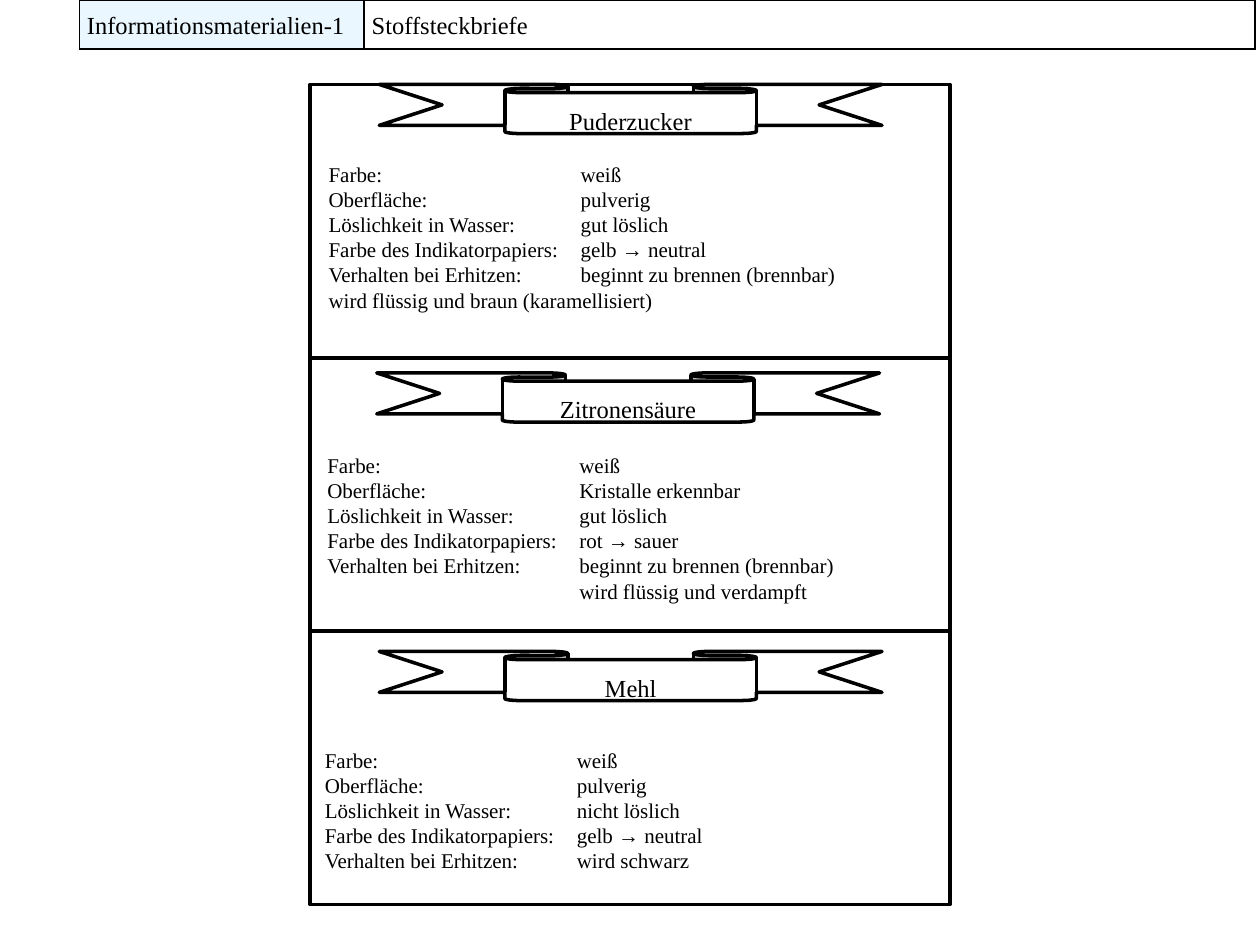
from dataclasses import dataclass

from lxml.etree import SubElement
from pptx import Presentation
from pptx.dml.color import RGBColor
from pptx.enum.shapes import MSO_SHAPE as Preset
from pptx.enum.text import MSO_ANCHOR as Anchor, PP_ALIGN as Align
from pptx.oxml.ns import qn
from pptx.util import Inches, Pt


@dataclass(frozen=True)
class Theme:
    font: str = "Times New Roman"
    ink: RGBColor = RGBColor(0, 0, 0)
    paper: RGBColor = RGBColor(255, 255, 255)
    tint: RGBColor = RGBColor(0xEB, 0xF7, 0xFF)
    heading: int = 14
    body: int = 12
    outline: int = 2
    border: int = 1


@dataclass(frozen=True)
class Profile:
    """One substance; offsets are (left, top) in inches from its card's corner."""
    name: str
    ribbon_offset: tuple
    facts_offset: tuple
    values: tuple


THEME = Theme()
CARD_LEFT, CARD_TOP, CARD_WIDTH, CARD_HEIGHT = 2.46, 0.67, 5.08, 2.17
RIBBON_SIZE = (3.99, 0.39)
FACTS_WIDTH, LINE_HEIGHT, VALUE_TAB = 5, 0.2, 2
HEADER_COLUMNS = (2.26, 7.07)
HEADER_LEFT, HEADER_HEIGHT = 0.63, 0.39

LABELS = ("Farbe:", "Oberfläche:", "Löslichkeit in Wasser:",
          "Farbe des Indikatorpapiers:", "Verhalten bei Erhitzen:")
PROFILES = (
    Profile("Puderzucker", (0.55, 0), (0.05, 0.56),
            ("weiß", "pulverig", "gut löslich", "gelb → neutral",
             "beginnt zu brennen (brennbar)\n"
             "wird flüssig und braun (karamellisiert)")),
    Profile("Zitronensäure", (0.53, 0.12), (0.04, 0.7),
            ("weiß", "Kristalle erkennbar", "gut löslich", "rot → sauer",
             "beginnt zu brennen (brennbar)\n\twird flüssig und verdampft")),
    Profile("Mehl", (0.55, 0.16), (0.02, 0.87),
            ("weiß", "pulverig", "nicht löslich", "gelb → neutral",
             "wird schwarz")),
)


def box(left, top, width, height):
    return [Inches(length) for length in (left, top, width, height)]


def add_run(paragraph, text, size):
    run = paragraph.add_run()
    run.text = text
    run.font.name = THEME.font
    run.font.size = Pt(size)
    run.font.color.rgb = THEME.ink


def add_outlined_shape(slide, preset, bounds, fill=None):
    shape = slide.shapes.add_shape(preset, *box(*bounds))
    shape.shadow.inherit = False
    if fill is None:
        shape.fill.background()
    else:
        shape.fill.solid()
        shape.fill.fore_color.rgb = fill
    shape.line.color.rgb = THEME.ink
    shape.line.width = Pt(THEME.outline)
    return shape


def add_ribbon(slide, left, top, name):
    ribbon = add_outlined_shape(slide, Preset.DOWN_RIBBON,
                                (left, top, *RIBBON_SIZE), THEME.paper)
    ribbon.text_frame.vertical_anchor = Anchor.MIDDLE
    paragraph = ribbon.text_frame.paragraphs[0]
    paragraph.alignment = Align.CENTER
    paragraph.line_spacing = 1.5
    add_run(paragraph, name, THEME.heading)


def set_value_tab(paragraph):
    tabs = SubElement(paragraph._p.get_or_add_pPr(), qn("a:tabLst"))
    SubElement(tabs, qn("a:tab"), pos=str(Inches(VALUE_TAB)), algn="l")


def add_facts(slide, left, top, values):
    """Lists label and value on a shared tab stop; a newline is a line break."""
    lines = [f"{label}\t{value}" for label, value in zip(LABELS, values)]
    line_count = "\n".join(lines).count("\n") + 1
    height = line_count * LINE_HEIGHT + 0.1
    frame = slide.shapes.add_textbox(
        *box(left, top, FACTS_WIDTH, height)).text_frame
    frame.word_wrap = True
    for index, line in enumerate(lines):
        paragraph = frame.add_paragraph() if index else frame.paragraphs[0]
        set_value_tab(paragraph)
        for part_index, part in enumerate(line.split("\n")):
            if part_index:
                paragraph.add_line_break()
            add_run(paragraph, part, THEME.body)


def add_cell_borders(cell):
    properties = cell._tc.get_or_add_tcPr()
    for index, side in enumerate(("a:lnL", "a:lnR", "a:lnT", "a:lnB")):
        line = properties.makeelement(qn(side), {"w": str(Pt(THEME.border))})
        color = SubElement(SubElement(line, qn("a:solidFill")), qn("a:srgbClr"))
        color.set("val", str(THEME.ink))
        properties.insert(index, line)


def fill_header_cell(cell, text, alignment, fill=None):
    if fill is None:
        cell.fill.background()
    else:
        cell.fill.solid()
        cell.fill.fore_color.rgb = fill
    add_cell_borders(cell)
    cell.vertical_anchor = Anchor.MIDDLE
    cell.margin_left, cell.margin_right = Inches(0.06), Inches(0.04)
    cell.margin_top = cell.margin_bottom = 0
    paragraph = cell.text_frame.paragraphs[0]
    paragraph.alignment = alignment
    paragraph.line_spacing = 1.15
    paragraph.space_after = Pt(10)
    add_run(paragraph, text, THEME.heading)


def add_header(slide):
    table = slide.shapes.add_table(
        1, len(HEADER_COLUMNS),
        *box(HEADER_LEFT, 0, sum(HEADER_COLUMNS), HEADER_HEIGHT)).table
    table.first_row = table.horz_banding = False
    for column, width in zip(table.columns, HEADER_COLUMNS):
        column.width = Inches(width)
    fill_header_cell(table.cell(0, 0), "Informationsmaterialien-1",
                     Align.LEFT, THEME.tint)
    fill_header_cell(table.cell(0, 1), "Stoffsteckbriefe", Align.JUSTIFY)


def add_card(slide, row, profile):
    top = CARD_TOP + row * CARD_HEIGHT
    add_outlined_shape(slide, Preset.RECTANGLE,
                       (CARD_LEFT, top, CARD_WIDTH, CARD_HEIGHT))
    for add_part, (right, down), content in (
            (add_facts, profile.facts_offset, profile.values),
            (add_ribbon, profile.ribbon_offset, profile.name)):
        add_part(slide, CARD_LEFT + right, top + down, content)


def main():
    presentation = Presentation()
    presentation.slide_width, presentation.slide_height = Inches(10), Inches(7.5)
    slide = presentation.slides.add_slide(presentation.slide_layouts[6])
    add_header(slide)
    for row, profile in enumerate(PROFILES):
        add_card(slide, row, profile)
    presentation.save("out.pptx")


if __name__ == "__main__":
    main()
